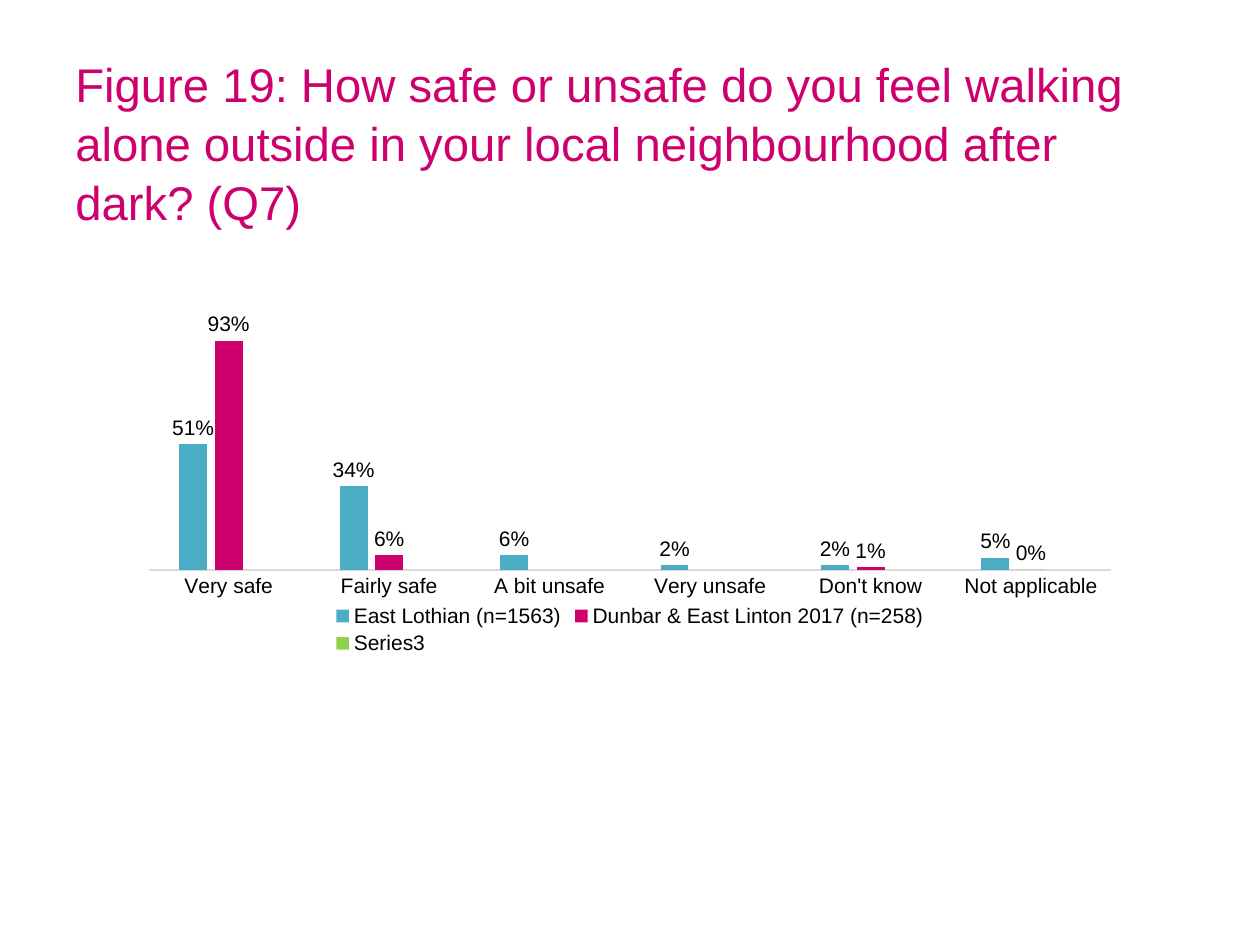
from lxml.etree import SubElement
from pptx import Presentation
from pptx.chart.data import CategoryChartData
from pptx.dml.color import RGBColor
from pptx.enum.chart import XL_CHART_TYPE as ChartType
from pptx.enum.chart import XL_LABEL_POSITION as LabelPosition
from pptx.enum.chart import XL_LEGEND_POSITION as LegendPosition
from pptx.enum.chart import XL_TICK_MARK as TickMark
from pptx.enum.text import MSO_ANCHOR as Anchor
from pptx.oxml.ns import qn
from pptx.util import Inches, Pt

# Content
TITLE = ("Figure 19: How safe or unsafe do you feel walking alone outside "
         "in your local neighbourhood after dark? (Q7)")
ANSWERS = ["Very safe", "Fairly safe", "A bit unsafe", "Very unsafe",
           "Don't know", "Not applicable"]
SERIES = [
    ("East Lothian (n=1563)", [0.51, 0.34, 0.06, 0.02, 0.02, 0.05], "blue"),
    ("Dunbar & East Linton 2017 (n=258)",
     [0.93, 0.06, None, None, 0.01, 0], "pink"),
    ("Series3", [None] * len(ANSWERS), "green"),
]

# Look and layout (shares of the slide's size; plot as shares of the chart)
COLORS = {"blue": "4BACC6", "pink": "CD006E", "green": "92D050",
          "text": "000000", "axis": "D9D9D9"}
FONT = "Arial"
WIDTH, HEIGHT = Inches(10), Inches(7.5)
TITLE_AREA = (0.05, 0.04, 0.9, 0.22)
CHART_AREA = (0.102, 0.303, 0.796, 0.395)
PLOT_AREA = {"x": 0.02, "y": 0.1, "w": 0.96, "h": 0.66}


def color(name):
    return RGBColor.from_string(COLORS[name])


def place(area):
    return [int(share * size) for share, size in zip(area, (WIDTH, HEIGHT) * 2)]


def style(target, values):
    for name, value in values.items():
        setattr(target, name, value)


def style_font(font, size, color_name):
    style(font, {"name": FONT, "size": Pt(size)})
    font.color.rgb = color(color_name)


deck = Presentation()
style(deck, {"slide_width": WIDTH, "slide_height": HEIGHT})
page = deck.slides.add_slide(deck.slide_layouts[6])

# Title
box = page.shapes.add_textbox(*place(TITLE_AREA))
style(box.text_frame, {"word_wrap": True, "vertical_anchor": Anchor.MIDDLE})
para = box.text_frame.paragraphs[0]
para.line_spacing = 1.04
span = para.add_run()
span.text = TITLE
style_font(span.font, 27, "pink")

# Chart
data = CategoryChartData(number_format="0%")
data.categories = ANSWERS
for name, values, _ in SERIES:
    data.add_series(name, values)
chart = page.shapes.add_chart(
    ChartType.COLUMN_CLUSTERED, *place(CHART_AREA), data).chart
style(chart, {"has_title": False, "has_legend": True})
style_font(chart.font, 12, "text")
style(chart.legend, {"position": LegendPosition.BOTTOM,
                     "include_in_layout": False})
style_font(chart.legend.font, 12, "text")

# Axes
answer_axis, share_axis = chart.category_axis, chart.value_axis
style(answer_axis, {"major_tick_mark": TickMark.NONE,
                    "minor_tick_mark": TickMark.NONE})
style_font(answer_axis.tick_labels.font, 12, "text")
answer_axis.format.line.width = Pt(0.75)
answer_axis.format.line.color.rgb = color("axis")
style(share_axis, {"visible": False, "has_major_gridlines": False,
                   "minimum_scale": 0, "maximum_scale": 1})

# Columns and their labels
plot = chart.plots[0]
style(plot, {"gap_width": 219, "overlap": -27, "vary_by_categories": False})
for series, (_, _, fill_name) in zip(plot.series, SERIES):
    series.format.fill.solid()
    series.format.fill.fore_color.rgb = color(fill_name)
    labels = series.data_labels
    style(labels, {"show_value": True, "position": LabelPosition.OUTSIDE_END,
                   "number_format": "0%", "number_format_is_linked": False})
    style_font(labels.font, 12, "text")

# Fixed inner plot area
plot_area = plot._element.getparent()
layout = plot_area.find(qn("c:layout"))
if layout is None:
    layout = SubElement(plot_area, qn("c:layout"))
    plot_area.insert(0, layout)
manual = SubElement(layout, qn("c:manualLayout"))
settings = {"layoutTarget": "inner", "xMode": "edge", "yMode": "edge",
            **PLOT_AREA}
for tag, value in settings.items():
    SubElement(manual, qn(f"c:{tag}")).set("val", str(value))

deck.save("out.pptx")
